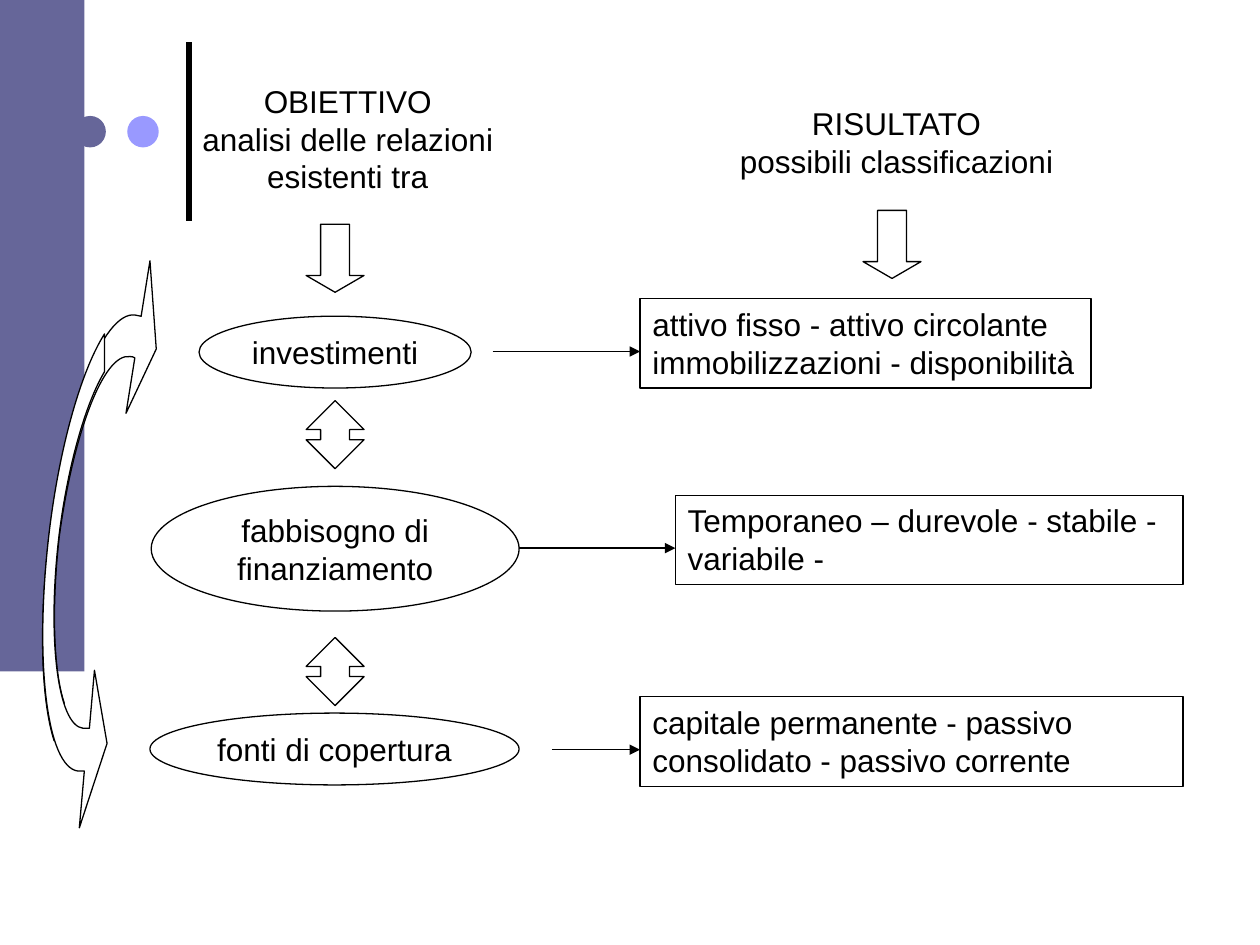
from lxml import etree
from pptx import Presentation
from pptx.dml.color import RGBColor
from pptx.enum.shapes import MSO_CONNECTOR, MSO_SHAPE
from pptx.enum.text import MSO_ANCHOR, PP_ALIGN
from pptx.oxml.ns import qn
from pptx.util import Pt

PX = 9144
BLACK, WHITE, SLATE, LILAC = "000000", "FFFFFF", "666699", "9999FF"
OVAL, RECT = MSO_SHAPE.OVAL, MSO_SHAPE.RECTANGLE
DOWN, UP_DOWN = MSO_SHAPE.DOWN_ARROW, MSO_SHAPE.UP_DOWN_ARROW
STRAIGHT = MSO_CONNECTOR.STRAIGHT
TOP, MIDDLE = MSO_ANCHOR.TOP, MSO_ANCHOR.MIDDLE
LEFT, CENTER = PP_ALIGN.LEFT, PP_ALIGN.CENTER

DECOR = [
    (OVAL, (59, 92, 25, 25), SLATE),
    (OVAL, (101, 92, 25, 25), LILAC),
    (RECT, (0, 0, 67, 533), SLATE),
]
HEADINGS = [
    ((114, 60, 324, 101), ["OBIETTIVO", "analisi delle relazioni esistenti tra"]),
    ((539, 78, 345, 71), ["RISULTATO", "possibili classificazioni"]),
]
TOPICS = [
    ((158, 251, 216, 57), ["investimenti"], False),
    ((120, 386, 292, 99), ["fabbisogno di finanziamento"], True),
    ((119, 566, 293, 57), ["fonti di copertura"], False),
]
RESULTS = [
    ((508, 237, 358, 71),
     ["attivo fisso - attivo circolante", "immobilizzazioni - disponibilità"], False),
    ((536, 393, 403, 71), ["Temporaneo – durevole - stabile - variabile -"], True),
    ((508, 553, 431, 71),
     ["capitale permanente - passivo consolidato - passivo corrente"], True),
]
BLOCK_ARROWS = [
    (DOWN, 243, 178, (0.5, 0.29)),
    (UP_DOWN, 243, 318, (0.23, 0.5)),
    (UP_DOWN, 243, 506, (0.23, 0.5)),
    (DOWN, 685, 167, (0.5, 0.29)),
]
LINKS = [(391, 508, 279), (412, 536, 435), (438, 508, 595)]
CURVED_ARROWS = [
    [(107, 284), (106, 283, 104, 283, 103, 283), (82, 280, 58, 345, 47, 426),
     (41, 480, 42, 531, 51, 558), (43, 588), (32, 554, 31, 491, 39, 425),
     (51, 325, 82, 247, 107, 250), (109, 250, 110, 250, 112, 251),
     (119, 207), (124, 277), (100, 328)],
    [(71, 578), (69, 578, 68, 578, 66, 578), (46, 576, 37, 507, 47, 424),
     (54, 369, 68, 320, 83, 295), (83, 265), (64, 295, 47, 356, 39, 423),
     (27, 524, 37, 609, 62, 612), (64, 612, 66, 612, 67, 612),
     (63, 657), (85, 590), (75, 532)],
]


def rgb(value):
    return RGBColor.from_string(value)


def emu(*lengths):
    return [n * PX for n in lengths]


def paint(sp, fill, outlined=True):
    sp.shadow.inherit = False
    if fill:
        sp.fill.solid()
        sp.fill.fore_color.rgb = rgb(fill)
    else:
        sp.fill.background()
    if outlined:
        sp.line.color.rgb = rgb(BLACK)
        sp.line.width = Pt(0.75)
    else:
        sp.line.fill.background()


def write(sp, lines, align, anchor, wrap=True):
    tf = sp.text_frame
    tf.word_wrap = wrap
    tf.vertical_anchor = anchor
    for i, line in enumerate(lines):
        p = tf.paragraphs[0] if i == 0 else tf.add_paragraph()
        p.text = line
        p.alignment = align
        p.font.name = "Arial"
        p.font.size = Pt(18)
        p.font.color.rgb = rgb(BLACK)


def add_line(shapes, start, end, width, arrow=False):
    line = shapes.add_connector(STRAIGHT, *emu(*start, *end))
    line.line.color.rgb = rgb(BLACK)
    line.line.width = Pt(width)
    if arrow:
        etree.SubElement(line.line._get_or_add_ln(), qn("a:tailEnd"), type="triangle")
    etree.SubElement(line._element.spPr, qn("a:effectLst"))


def add_curve(shapes, path):
    points = [step[-2:] for step in path]
    builder = shapes.build_freeform(*points[0], scale=PX)
    builder.add_line_segments(points[1:], close=True)
    sp = builder.convert_to_shape()
    left, top = (min(axis) for axis in zip(*points))
    segments = list(sp._element.iter(qn("a:lnTo")))
    for segment, step in zip(segments, path[1:]):
        if len(step) == 6:
            curve = etree.Element(qn("a:cubicBezTo"))
            for x, y in zip(step[::2], step[1::2]):
                etree.SubElement(curve, qn("a:pt"), x=str(x - left), y=str(y - top))
            segment.getparent().replace(segment, curve)
    return sp


def main():
    prs = Presentation()
    prs.slide_width, prs.slide_height = emu(1000, 750)
    s = prs.slides.add_slide(prs.slide_layouts[6])
    shapes = s.shapes

    add_line(shapes, (150, 175), (150, 33), 3)
    for kind, box, color in DECOR:
        paint(shapes.add_shape(kind, *emu(*box)), color, outlined=False)
    for box, lines in HEADINGS:
        write(shapes.add_textbox(*emu(*box)), lines, CENTER, TOP)

    for kind, items, fill, align, anchor in [
        (OVAL, TOPICS, WHITE, CENTER, MIDDLE),
        (RECT, RESULTS, None, LEFT, TOP),
    ]:
        for box, lines, wrap in items:
            sp = shapes.add_shape(kind, *emu(*box))
            paint(sp, fill)
            write(sp, lines, align, anchor, wrap)

    for kind, x, y, adjustments in BLOCK_ARROWS:
        sp = shapes.add_shape(kind, *emu(x, y, 46, 54))
        for i, value in enumerate(adjustments):
            sp.adjustments[i] = value
        paint(sp, WHITE)

    group = shapes.add_group_shape()
    for path in CURVED_ARROWS:
        paint(add_curve(group.shapes, path), WHITE)

    for x1, x2, y in LINKS:
        add_line(shapes, (x1, y), (x2, y), 0.75, arrow=True)

    prs.save("out.pptx")


if __name__ == "__main__":
    main()
